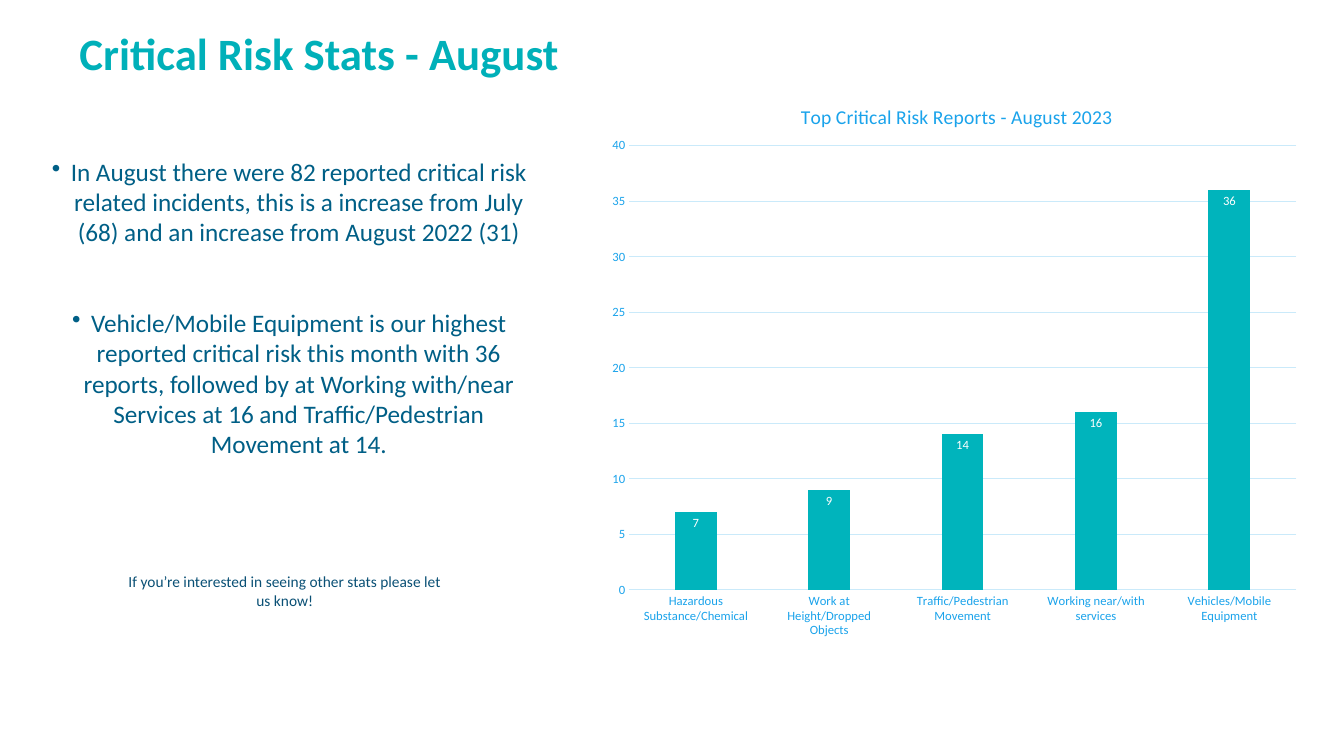
from pptx import Presentation
from pptx.chart.data import CategoryChartData
from pptx.dml.color import RGBColor
from pptx.enum.chart import XL_CHART_TYPE, XL_LABEL_POSITION, XL_TICK_MARK
from pptx.enum.text import PP_ALIGN
from pptx.oxml import parse_xml
from pptx.oxml.ns import nsdecls, qn
from pptx.util import Pt

COLUMN = XL_CHART_TYPE.COLUMN_CLUSTERED
INSIDE = XL_LABEL_POSITION.INSIDE_END
NO_TICK = XL_TICK_MARK.NONE
LEFT, CENTER = PP_ALIGN.LEFT, PP_ALIGN.CENTER


class Theme:
    font = "Calibri"
    teal = RGBColor.from_string("00B0B9")
    bar = RGBColor.from_string("00B4BC")
    navy = RGBColor.from_string("005F86")
    ink = RGBColor.from_string("0A5075")
    sky = RGBColor.from_string("1AA3EB")
    pale = RGBColor.from_string("CAEAFA")
    white = RGBColor.from_string("FFFFFF")
    head, body, chart, note, base, label = 32, 18, 14, 11, 10, 9


def apply(target, values):
    for name, value in values.items():
        setattr(target, name, value)


class Page:
    def __init__(self, slide, theme):
        self.slide = slide
        self.theme = theme

    def style(self, font, size, color, bold=False):
        apply(font, {"name": self.theme.font, "size": Pt(size), "bold": bold})
        font.color.rgb = color

    def line(self, line, color):
        line.color.rgb = color
        line.width = Pt(0.75)

    def text(self, box, lines, size, color, bold=False, bullet=False, **form):
        shape = self.slide.shapes.add_textbox(*map(Pt, box))
        frame = shape.text_frame
        frame.word_wrap = True
        for i, words in enumerate(lines):
            para = frame.add_paragraph() if i else frame.paragraphs[0]
            if bullet:
                self.bullet(para)
            para.text = words
            apply(para, form)
            if i == 0:
                para.space_before = Pt(0)
            self.style(para.font, size, color, bold)

    def bullet(self, para):
        props = para._p.get_or_add_pPr()
        props.set("marL", str(Pt(13.5)))
        props.set("indent", str(Pt(-13.5)))
        props.append(parse_xml(f'<a:buChar {nsdecls("a")} char="•"/>'))

    def place(self, parent, index, inner=False, **spots):
        """Set a manual layout, given as fractions of the chart."""
        old = parent.find(qn("c:layout"))
        if old is not None:
            parent.remove(old)
        target = '<c:layoutTarget val="inner"/>' if inner else ""
        modes = "".join(f'<c:{k}Mode val="edge"/>' for k in "xy")
        sizes = "".join(f'<c:{k} val="{v}"/>' for k, v in spots.items())
        parent.insert(index, parse_xml(
            f'<c:layout {nsdecls("c")}><c:manualLayout>{target}{modes}{sizes}'
            "</c:manualLayout></c:layout>"))

    def chart(self, box, title, counts):
        look = self.theme
        data = CategoryChartData()
        data.categories = list(counts)
        data.add_series("Series 1", list(counts.values()))
        frame = self.slide.shapes.add_chart(COLUMN, *map(Pt, box), data)
        chart = frame.chart
        chart.has_legend = False
        self.style(chart.font, look.base, look.ink)

        # Title and plot area
        head = chart.chart_title
        head.text_frame.text = title
        self.style(head.text_frame.paragraphs[0].runs[0].font,
                   look.chart, look.sky)
        self.place(head.element, 1, x=0.28, y=0.04)
        area = chart.element.find(".//" + qn("c:plotArea"))
        self.place(area, 0, inner=True, x=0.044, y=0.122, w=0.936, h=0.794)

        # Axes
        for axis in (chart.category_axis, chart.value_axis):
            apply(axis, {"major_tick_mark": NO_TICK,
                         "minor_tick_mark": NO_TICK})
            self.style(axis.tick_labels.font, look.label, look.sky)
        self.line(chart.category_axis.format.line, look.pale)
        scale = chart.value_axis
        apply(scale, {"minimum_scale": 0, "maximum_scale": 40,
                      "major_unit": 5, "has_major_gridlines": True})
        scale.format.line.fill.background()
        self.line(scale.major_gridlines.format.line, look.pale)

        # Bars and labels
        plot = chart.plots[0]
        apply(plot, {"gap_width": 219, "overlap": -27,
                     "vary_by_categories": False, "has_data_labels": True})
        fill = plot.series[0].format.fill
        fill.solid()
        fill.fore_color.rgb = look.bar
        apply(plot.data_labels, {"show_value": True, "position": INSIDE})
        self.style(plot.data_labels.font, look.label, look.white)


def main():
    deck = Presentation()
    apply(deck, {"slide_width": Pt(960), "slide_height": Pt(540)})
    theme = Theme()
    page = Page(deck.slides.add_slide(deck.slide_layouts[6]), theme)

    # Heading
    page.text((49.7, 21.6, 860, 67), ["Critical Risk Stats - August"],
              theme.head, theme.teal, bold=True,
              alignment=LEFT, line_spacing=Pt(32))

    # Findings
    page.text((23.8, 108, 365.8, 362), [
        "In August there were 82 reported critical risk related incidents, "
        "this is a increase from July (68) and an increase from "
        "August 2022 (31)",
        "Vehicle/Mobile Equipment is our highest reported critical risk this "
        "month with 36 reports, followed by at Working with/near Services "
        "at 16 and Traffic/Pedestrian Movement at 14.",
    ], theme.body, theme.navy, bullet=True, alignment=CENTER,
        line_spacing=Pt(21.6), space_before=Pt(43.2))

    # Closing note
    page.text((82.8, 405.4, 241.2, 33.8),
              ["If you’re interested in seeing other stats please let us know!"],
              theme.note, theme.ink, alignment=CENTER)

    # Reports by risk
    page.chart((427, 55.4, 509, 399.6),
               "Top Critical Risk Reports - August 2023", {
                   "Hazardous Substance/Chemical": 7,
                   "Work at Height/Dropped Objects": 9,
                   "Traffic/Pedestrian Movement": 14,
                   "Working near/with services": 16,
                   "Vehicles/Mobile Equipment": 36,
               })
    deck.save("out.pptx")


if __name__ == "__main__":
    main()
